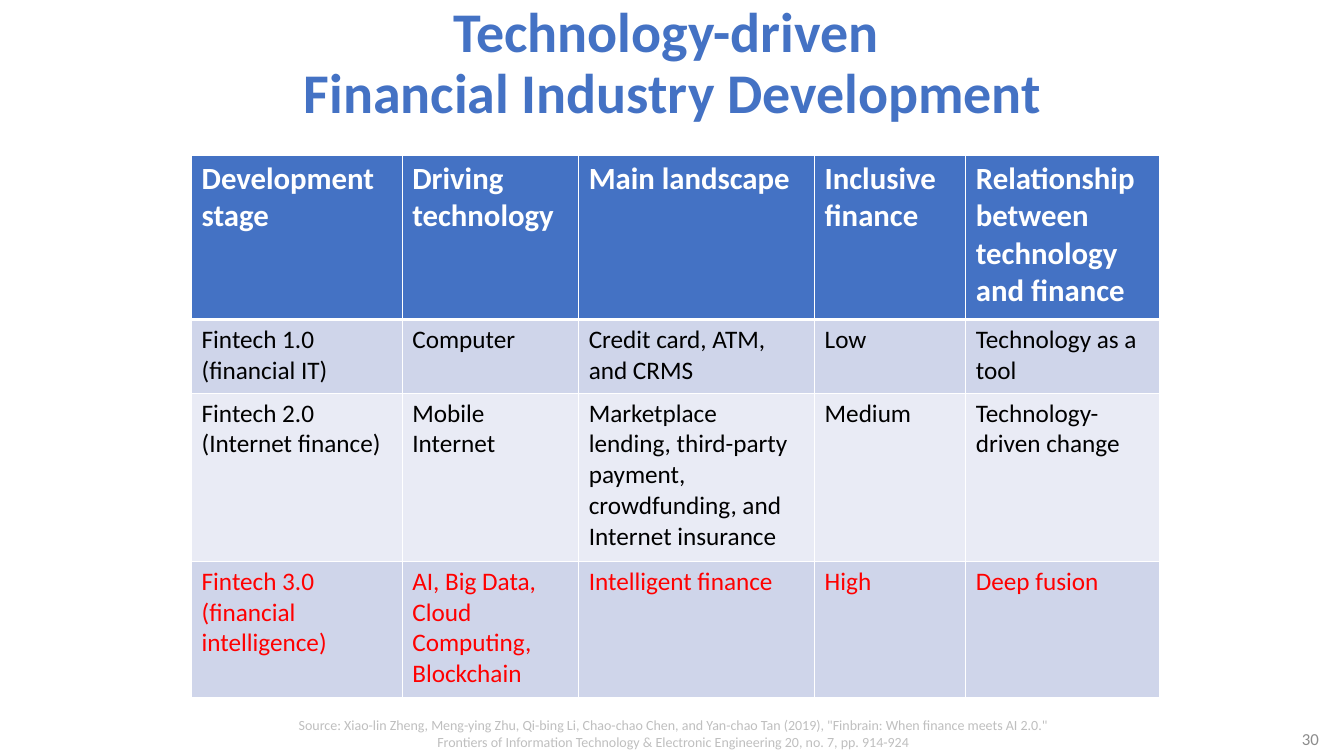
"""Build the slide on technology-driven financial industry development."""
from dataclasses import dataclass

from lxml.etree import SubElement
from pptx import Presentation
from pptx.dml.color import RGBColor
from pptx.enum.text import MSO_ANCHOR, MSO_AUTO_SIZE, PP_ALIGN
from pptx.oxml.ns import qn
from pptx.util import Inches, Pt


@dataclass(frozen=True)
class Theme:
    font: str = "Calibri"
    blue: str = "4472C4"
    white: str = "FFFFFF"
    black: str = "000000"
    red: str = "FF0000"
    gray: str = "8C8C8C"
    pale: str = "BFBFBF"
    bands: tuple = ("CFD5EA", "E9EBF5")
    title: int = 40
    head: int = 22
    body: int = 18
    page: int = 12
    note: int = 10


class Deck:
    def __init__(self, theme):
        self.theme = theme
        self.file = Presentation()
        self.file.slide_width = Inches(13.33)
        self.file.slide_height = Inches(7.5)
        self.slide = self.file.slides.add_slide(self.file.slide_layouts[5])

    def style(self, frame, size, color, bold=False, align=PP_ALIGN.LEFT):
        for para in frame.paragraphs:
            para.alignment = align
            for run in para.runs:
                font = run.font
                font.name = self.theme.font
                font.size = Pt(size)
                font.bold = bold
                font.color.rgb = RGBColor.from_string(color)

    def place(self, shape, left, top, width, height):
        shape.left, shape.top = Inches(left), Inches(top)
        shape.width, shape.height = Inches(width), Inches(height)

    def title(self, text, *box):
        shape = self.slide.shapes.title
        self.place(shape, *box)
        frame = shape.text_frame
        frame.text = text
        frame.auto_size = MSO_AUTO_SIZE.NONE
        frame.vertical_anchor = MSO_ANCHOR.MIDDLE
        frame.paragraphs[0].line_spacing = 0.9
        self.style(frame, self.theme.title, self.theme.blue, True, PP_ALIGN.CENTER)

    def label(self, text, box, size, color, align, anchor=MSO_ANCHOR.TOP):
        shape = self.slide.shapes.add_textbox(*map(Inches, box))
        frame = shape.text_frame
        frame.text = text
        frame.word_wrap = True
        frame.vertical_anchor = anchor
        self.style(frame, size, color, align=align)

    def border(self, cell, top, bottom):
        props = cell._tc.get_or_add_tcPr()
        for side, width in (("L", 1), ("R", 1), ("T", top), ("B", bottom)):
            line = SubElement(props, qn(f"a:ln{side}"), w=str(Pt(width)))
            fill = SubElement(line, qn("a:solidFill"))
            SubElement(fill, qn("a:srgbClr"), val=self.theme.white)

    def table(self, rows, left, top, widths, heights):
        theme = self.theme
        frame = self.slide.shapes.add_table(
            len(rows), len(widths), Inches(left), Inches(top),
            Inches(sum(widths)), Inches(sum(heights)))
        grid = frame.table
        for col, width in zip(grid.columns, widths):
            col.width = Inches(width)
        for row, height in zip(grid.rows, heights):
            row.height = Inches(height)
        last = len(rows) - 1
        for r, texts in enumerate(rows):
            head = r == 0
            back = theme.blue if head else theme.bands[(r - 1) % 2]
            ink = theme.white if head else theme.red if r == last else theme.black
            size = theme.head if head else theme.body
            for c, text in enumerate(texts):
                cell = grid.cell(r, c)
                self.border(cell, 3 if r == 1 else 1, 3 if head else 1)
                cell.fill.solid()
                cell.fill.fore_color.rgb = RGBColor.from_string(back)
                cell.text_frame.text = text
                self.style(cell.text_frame, size, ink, head)

    def save(self):
        self.file.save("out.pptx")


STAGES = [
    ("Development stage", "Driving technology", "Main landscape",
     "Inclusive finance", "Relationship between technology and finance"),
    ("Fintech 1.0 (financial IT)", "Computer", "Credit card, ATM, and CRMS",
     "Low", "Technology as a tool"),
    ("Fintech 2.0 (Internet finance)", "Mobile Internet",
     "Marketplace lending, third-party payment, crowdfunding, and Internet insurance",
     "Medium", "Technology-driven change"),
    ("Fintech 3.0 (financial intelligence)",
     "AI, Big Data, Cloud Computing, Blockchain",
     "Intelligent finance", "High", "Deep fusion"),
]
SOURCE = (
    "Source: Xiao-lin Zheng, Meng-ying Zhu, Qi-bing Li, Chao-chao Chen, "
    'and Yan-chao Tan (2019), "Finbrain: When finance meets AI 2.0." '
    "Frontiers of Information Technology & Electronic Engineering 20, "
    "no. 7, pp. 914-924"
)


def main():
    theme = Theme()
    deck = Deck(theme)
    deck.title("Technology-driven \vFinancial Industry Development", 2.17, 0, 9, 1.29)
    deck.table(STAGES, 1.9, 1.54, (2.09, 1.75, 2.34, 1.5, 1.92),
               (1.63, 0.73, 1.67, 1.35))
    deck.label("30", (12.13, 7.2, 1.05, 0.26), theme.page, theme.gray,
               PP_ALIGN.RIGHT, MSO_ANCHOR.MIDDLE)
    deck.label(SOURCE, (2.71, 7.06, 7.93, 0.44), theme.note, theme.pale,
               PP_ALIGN.CENTER)
    deck.save()


if __name__ == "__main__":
    main()
